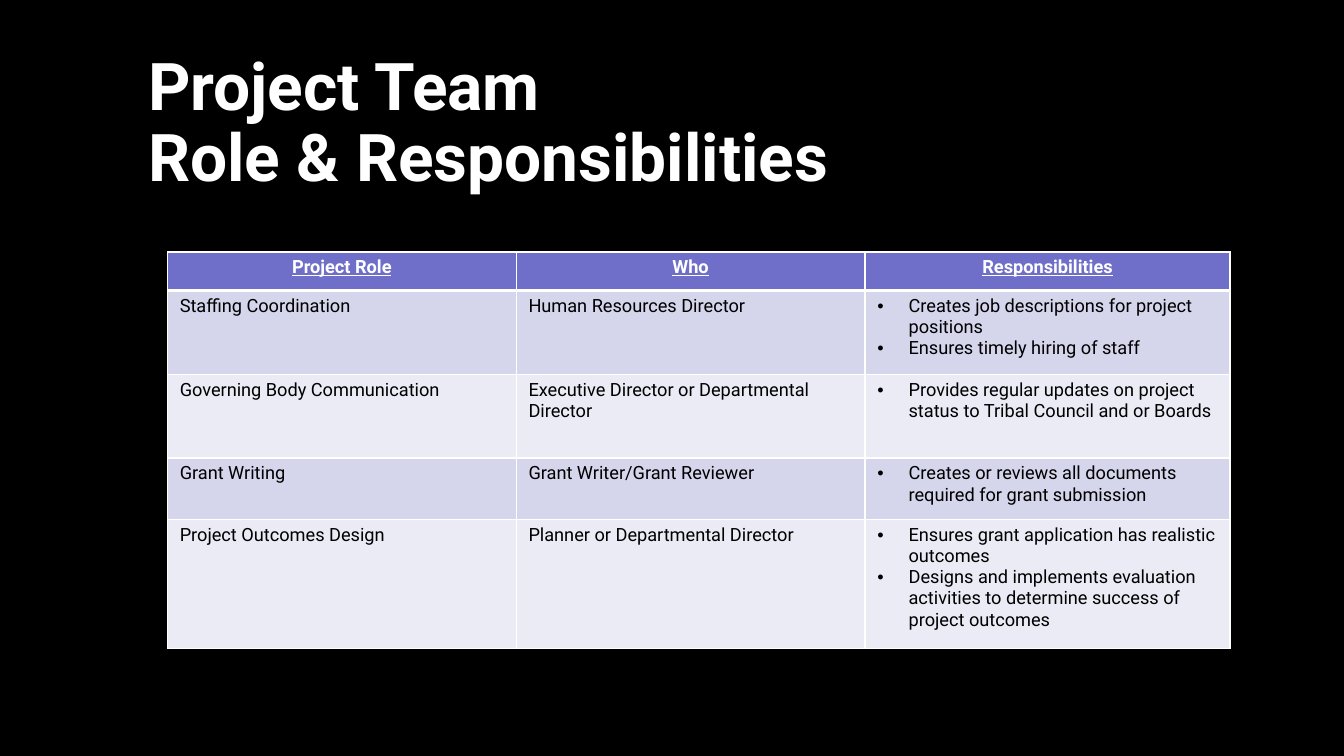
from lxml.etree import SubElement
from pptx import Presentation
from pptx.dml.color import RGBColor
from pptx.enum.text import MSO_ANCHOR, MSO_AUTO_SIZE, PP_ALIGN
from pptx.oxml import parse_xml
from pptx.oxml.ns import nsdecls, qn
from pptx.util import Cm, Pt

# Content
TITLE = "Project Team\vRole & Responsibilities"
HEADERS = ("Project Role", "Who", "Responsibilities")
TEAM = [
    ("Staffing Coordination", "Human Resources Director",
     ["Creates job descriptions for project positions",
      "Ensures timely hiring of staff"]),
    ("Governing Body Communication", "Executive Director or Departmental Director",
     ["Provides regular updates on project status to Tribal Council and or Boards"]),
    ("Grant Writing", "Grant Writer/Grant Reviewer",
     ["Creates or reviews all documents required for grant submission"]),
    ("Project Outcomes Design", "Planner or Departmental Director",
     ["Ensures grant application has realistic outcomes",
      "Designs and implements evaluation activities to determine success of "
      "project outcomes"]),
]

# Look
COLORS = {"black": "000000", "white": "FFFFFF", "header": "6F6FCA",
          "odd": "D5D5EC", "even": "EBEBF6"}
FONT = "Roboto"
COLUMN_WIDTHS = (8.79, 8.79, 9.2)
ROW_HEIGHTS = (0.97, 2.11, 2.11, 1.55, 3.25)
BULLET_INDENT = Cm(0.79)


def paint(fill, color):
    fill.solid()
    fill.fore_color.rgb = RGBColor.from_string(COLORS[color])


def format_runs(para, size, color, bold=False, underline=False):
    for span in para.runs:
        font = span.font
        font.name, font.size = FONT, Pt(size)
        font.bold, font.underline = bold, underline
        font.color.rgb = RGBColor.from_string(COLORS[color])


def add_bullet(para):
    properties = para._p.get_or_add_pPr()
    properties.set("marL", str(BULLET_INDENT))
    properties.set("indent", str(-BULLET_INDENT))
    SubElement(properties, qn("a:buFont")).set("typeface", "Arial")
    SubElement(properties, qn("a:buChar")).set("char", "•")


def add_borders(cell, top, bottom):
    properties = cell._tc.get_or_add_tcPr()
    sides = (("lnL", 1), ("lnR", 1), ("lnT", top), ("lnB", bottom))
    for index, (side, width) in enumerate(sides):
        properties.insert(index, parse_xml(
            f'<a:{side} {nsdecls("a")} w="{Pt(width)}"><a:solidFill>'
            f'<a:srgbClr val="{COLORS["white"]}"/></a:solidFill></a:{side}>'))


# Page
deck = Presentation()
deck.slide_width, deck.slide_height = Cm(33.87), Cm(19.05)
page = deck.slides.add_slide(deck.slide_layouts[5])
paint(page.background.fill, "black")

# Title
title = page.shapes.title
title.left, title.top, title.width, title.height = Cm(3.48), Cm(1.07), Cm(28.27), Cm(4.14)
frame = title.text_frame
frame.text = TITLE
frame.word_wrap = True
frame.auto_size = MSO_AUTO_SIZE.NONE
frame.vertical_anchor = MSO_ANCHOR.MIDDLE
heading = frame.paragraphs[0]
heading.alignment = PP_ALIGN.LEFT
heading.line_spacing = 0.9
format_runs(heading, 47, "white", bold=True)

# Table
rows = [HEADERS, *TEAM]
table = page.shapes.add_table(
    len(rows), len(HEADERS), Cm(4.22), Cm(6.35),
    Cm(sum(COLUMN_WIDTHS)), Cm(sum(ROW_HEIGHTS))).table
for column, width in zip(table.columns, COLUMN_WIDTHS):
    column.width = Cm(width)
for row, height in zip(table.rows, ROW_HEIGHTS):
    row.height = Cm(height)

for row_index, row in enumerate(rows):
    is_header = row_index == 0
    band = "header" if is_header else ("even", "odd")[row_index % 2]
    for column_index, content in enumerate(row):
        cell = table.cell(row_index, column_index)
        paint(cell.fill, band)
        add_borders(cell, 3 if row_index == 1 else 1, 3 if is_header else 1)
        cell.margin_left = cell.margin_right = Cm(0.31)
        cell.margin_top = cell.margin_bottom = Cm(0.13)
        has_bullets = isinstance(content, list)
        cell.text_frame.text = "\n".join(content) if has_bullets else content
        for para in cell.text_frame.paragraphs:
            para.alignment = PP_ALIGN.CENTER if is_header else PP_ALIGN.LEFT
            if has_bullets:
                add_bullet(para)
            format_runs(para, 13, "white" if is_header else "black",
                        bold=is_header, underline=is_header)

deck.save("out.pptx")
